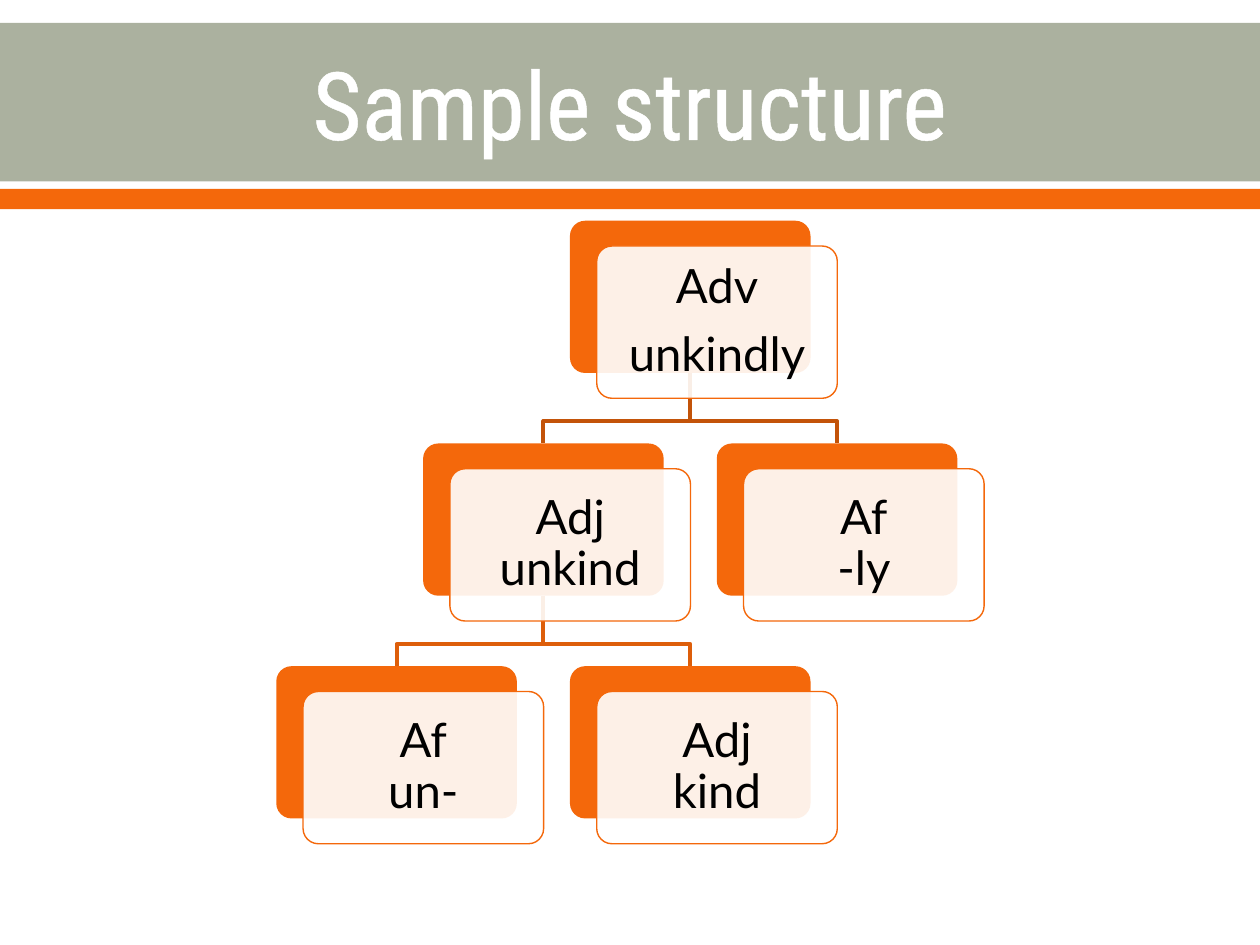
from lxml import etree
from pptx import Presentation
from pptx.dml.color import RGBColor
from pptx.enum.shapes import MSO_SHAPE
from pptx.enum.text import MSO_ANCHOR, PP_ALIGN
from pptx.oxml.ns import qn
from pptx.util import Cm, Pt

RECTANGLE = MSO_SHAPE.RECTANGLE
ROUNDED = MSO_SHAPE.ROUNDED_RECTANGLE
MIDDLE = MSO_ANCHOR.MIDDLE
CENTER = PP_ALIGN.CENTER

# Tree layout in centimetres
ROOT_LEFT, ROOT_TOP = 11.49, 4.45
HALF_STEP, LEVEL_STEP = 2.96, 4.49
CARD_WIDTH, CARD_HEIGHT = 4.85, 3.07
SHIFT_X, SHIFT_Y = 0.54, 0.51
BEND = 0.97

# Text, column in half steps from the root, level, index of the parent
NODES = [
    ("Adv\nunkindly", 0, 0, None),
    ("Adj\vunkind", -1, 1, 0),
    ("Af\vun-", -2, 2, 1),
    ("Adj\vkind", 0, 2, 1),
    ("Af\v-ly", 1, 1, 0),
]
BRANCH_COLORS = {1: "C35309", 2: "DD5E0A"}


def color(value):
    return RGBColor.from_string(value)


class TreeSlide:
    ORANGE, SAGE, WHITE, BLACK = "F4680B", "ABB19F", "FFFFFF", "000000"
    TITLE_FONT, BODY_FONT = "Roboto Condensed", "Lato"

    def __init__(self, page):
        self.page = page

    def block(self, kind, left, top, width, height, fill):
        shape = self.page.shapes.add_shape(kind, Cm(left), Cm(top), Cm(width), Cm(height))
        shape.shadow.inherit = False
        shape.fill.solid()
        shape.fill.fore_color.rgb = color(fill)
        shape.line.fill.background()
        return shape

    def set_text(self, frame, text, font, size, ink):
        frame.word_wrap = True
        frame.vertical_anchor = MIDDLE
        frame.text = text
        for para in frame.paragraphs:
            para.alignment = CENTER
            for span in para.runs:
                span.font.name = font
                span.font.size = Pt(size)
                span.font.color.rgb = color(ink)

    def title(self, text):
        box = self.page.shapes.add_textbox(Cm(1.27), Cm(0.51), Cm(22.86), Cm(3.1))
        self.set_text(box.text_frame, text, self.TITLE_FONT, 54, self.WHITE)
        # White outline around the letters
        outline = etree.Element(qn("a:ln"), w=str(Pt(1.1)))
        fill = etree.SubElement(outline, qn("a:solidFill"))
        etree.SubElement(fill, qn("a:srgbClr"), val=self.WHITE)
        span = box.text_frame.paragraphs[0].runs[0]
        span.font._element.insert(0, outline)

    def branch(self, start, end, ink):
        (start_x, start_y), (end_x, end_y) = start, end
        bend_y = start_y + BEND
        corners = [(start_x, bend_y), (end_x, bend_y), (end_x, end_y)]
        builder = self.page.shapes.build_freeform(Cm(start_x), Cm(start_y))
        builder.add_line_segments([(Cm(x), Cm(y)) for x, y in corners], close=False)
        shape = builder.convert_to_shape()
        shape.shadow.inherit = False
        shape.fill.background()
        shape.line.color.rgb = color(ink)
        shape.line.width = Pt(2.25)

    def card(self, left, top, text):
        back = self.block(ROUNDED, left, top, CARD_WIDTH, CARD_HEIGHT, self.ORANGE)
        front = self.block(ROUNDED, left + SHIFT_X, top + SHIFT_Y,
                           CARD_WIDTH, CARD_HEIGHT, self.WHITE)
        back.adjustments[0] = front.adjustments[0] = 0.1
        tint = front._element.spPr.find(qn("a:solidFill"))[0]
        etree.SubElement(tint, qn("a:alpha"), val="90000")
        front.line.color.rgb = color(self.ORANGE)
        front.line.width = Pt(0.8)

        frame = front.text_frame
        frame.margin_left = frame.margin_right = Cm(0.3)
        frame.margin_top = frame.margin_bottom = Cm(0.3)
        self.set_text(frame, text, self.BODY_FONT, 27, self.BLACK)
        for para in frame.paragraphs:
            para.line_spacing = 0.9
            para.space_after = Pt(9.5)


def corner(column, level):
    return ROOT_LEFT + column * HALF_STEP, ROOT_TOP + level * LEVEL_STEP


def main():
    deck = Presentation()
    deck.slide_width, deck.slide_height = Cm(25.4), Cm(19.05)
    slide = TreeSlide(deck.slides.add_slide(deck.slide_layouts[6]))

    # Header bands and title
    slide.block(RECTANGLE, 0, 0.46, 25.4, 3.2, slide.SAGE)
    slide.block(RECTANGLE, 0, 3.81, 25.4, 0.41, slide.ORANGE)
    slide.title("Sample structure")

    # Branches lie behind the cards
    for _, column, level, parent in NODES:
        if parent is not None:
            _, parent_column, parent_level, _ = NODES[parent]
            left, top = corner(parent_column, parent_level)
            child_left, child_top = corner(column, level)
            slide.branch((left + CARD_WIDTH / 2, top + CARD_HEIGHT),
                         (child_left + CARD_WIDTH / 2, child_top),
                         BRANCH_COLORS[level])

    # Cards
    for text, column, level, _ in NODES:
        slide.card(*corner(column, level), text)

    deck.save("out.pptx")


if __name__ == "__main__":
    main()
